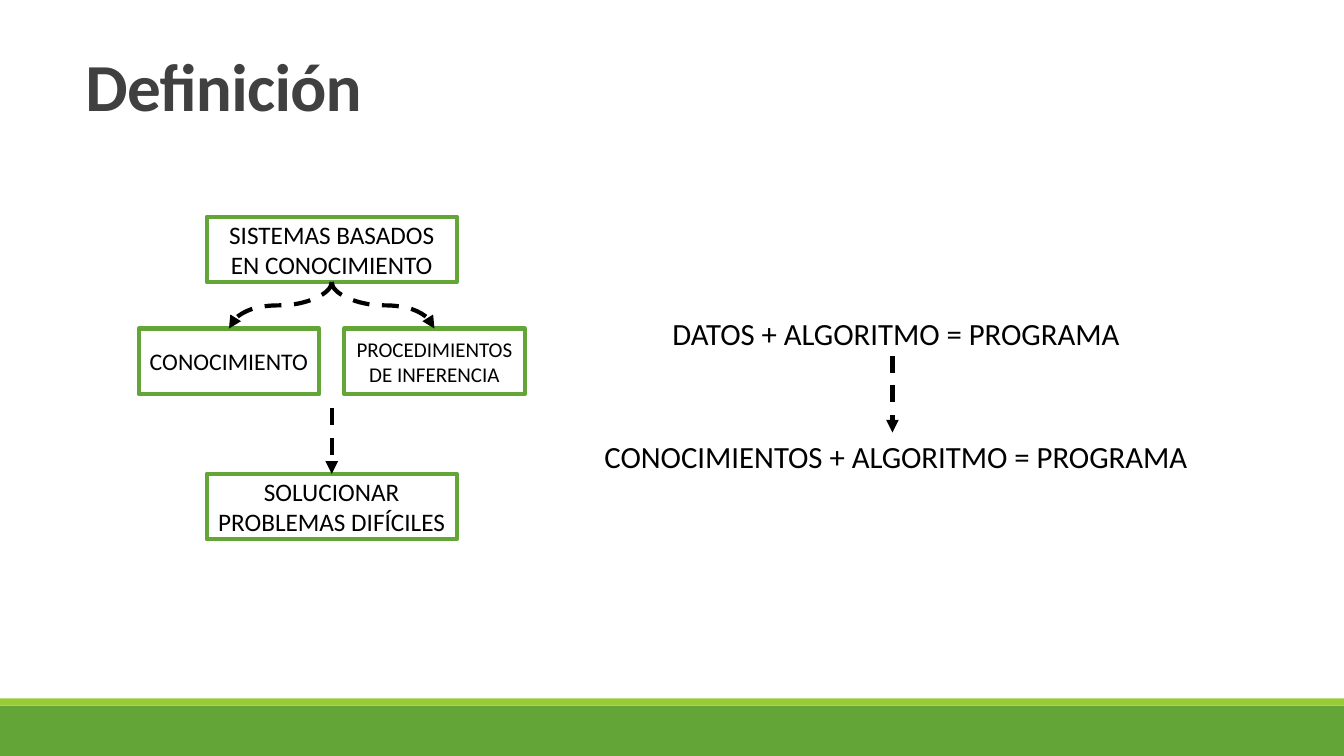
from lxml.etree import SubElement as Sub
from pptx import Presentation
from pptx.dml.color import RGBColor
from pptx.enum.dml import MSO_LINE as Dash
from pptx.enum.shapes import MSO_CONNECTOR as Conn, MSO_SHAPE as Shape
from pptx.enum.text import MSO_ANCHOR as Anchor, MSO_AUTO_SIZE as Auto, PP_ALIGN as Align
from pptx.oxml.ns import qn
from pptx.util import Cm, Pt

GREEN, LIME, BLACK, WHITE, GRAY = "63A537", "99CB38", "000000", "FFFFFF", "404040"


def color(code):
    return RGBColor.from_string(code)


class Page:
    font = "Calibri"
    stroke = Pt(3)

    def __init__(self, slide):
        self.slide = slide
        self.shapes = slide.shapes

    def style(self, frame, text, size, tint=BLACK, align=Align.CENTER):
        frame.word_wrap = True
        frame.auto_size = Auto.NONE
        frame.text = text
        para = frame.paragraphs[0]
        para.alignment = align
        para.font.name, para.font.size = self.font, Pt(size)
        para.font.color.rgb = color(tint)
        return para

    def title(self, text, x, y, w, h):
        head = self.shapes.title
        head.left, head.top, head.width, head.height = Cm(x), Cm(y), Cm(w), Cm(h)
        head.text_frame.vertical_anchor = Anchor.TOP
        para = self.style(head.text_frame, text, 48, GRAY, Align.JUSTIFY)
        para.font.bold = True
        para.line_spacing = 0.85
        para.runs[0].font._element.set("spc", "-50")

    def rect(self, x, y, w, h, fill):
        rect = self.shapes.add_shape(Shape.RECTANGLE, Cm(x), Cm(y), Cm(w), Cm(h))
        rect.shadow.inherit = False
        rect.fill.solid()
        rect.fill.fore_color.rgb = color(fill)
        rect.line.fill.background()
        return rect

    def box(self, text, mid, y, w, h, size):
        box = self.rect(mid - w / 2, y, w, h, WHITE)
        box.line.color.rgb = color(GREEN)
        box.line.width = self.stroke
        box.text_frame.vertical_anchor = Anchor.MIDDLE
        self.style(box.text_frame, text, size)

    def label(self, text, x, y, w, h):
        box = self.shapes.add_textbox(Cm(x), Cm(y), Cm(w), Cm(h))
        para = self.style(box.text_frame, text, 22)
        para.space_before = Pt(3)
        props = para._p.get_or_add_pPr()
        props.set("marL", str(Cm(0.18)))
        props.set("indent", "0")

    def arrow(self, x1, y1, x2, y2):
        """Downward dashed arrow, curved when it also moves sideways."""
        if x1 == x2:
            kind, ends = Conn.STRAIGHT, (x1, y1, x2, y2)
        else:
            # A curve leaves sideways, so lay it flat and turn it
            kind = Conn.CURVE
            side = 1 if x2 < x1 else -1
            mx, my = (x1 + x2) / 2, (y1 + y2) / 2
            dx, dy = abs(x2 - x1) / 2, side * (y2 - y1) / 2
            ends = (mx - dy, my - dx, mx + dy, my + dx)
        link = self.shapes.add_connector(kind, *map(Cm, ends))
        link.line.color.rgb = color(BLACK)
        link.line.width = self.stroke
        link.line.dash_style = Dash.DASH
        props = link._element.spPr
        if kind == Conn.CURVE:
            turn = 90 if side > 0 else 270
            props.find(qn("a:xfrm")).set("rot", str(turn * 60000))
        Sub(props.find(qn("a:ln")), qn("a:tailEnd"), type="triangle")
        Sub(props, qn("a:effectLst"))


def main():
    deck = Presentation()
    deck.slide_width, deck.slide_height = Cm(33.87), Cm(19.05)
    page = Page(deck.slides.add_slide(deck.slide_layouts[5]))

    # Footer bands and title
    page.rect(0, 17.78, 33.87, 1.27, GREEN)
    page.rect(0, 17.6, 33.87, 0.18, LIME)
    page.title("Definición", 1.9, 1.3, 30.02, 3.63)

    # Diagram of knowledge-based systems
    mid, gap, high = 8.36, 2.59, 1.65
    top, row, base = 5.46, 8.28, 11.94
    page.box("SOLUCIONAR PROBLEMAS DIFÍCILES", mid, base, 6.3, high, 18)
    page.box("SISTEMAS BASADOS EN CONOCIMIENTO", mid, top, 6.3, high, 18)
    page.arrow(mid, 10.29, mid, base)
    parts = (("CONOCIMIENTO", 17, mid - gap),
             ("PROCEDIMIENTOS DE INFERENCIA", 15, mid + gap))
    for text, size, x in parts:
        page.box(text, x, row, 4.55, high, size)
        page.arrow(mid, top + high, x, row)

    # Equations
    left, wide, tall = 14.63, 15.72, 1.17
    first, last = 7.8, 10.9
    page.label("DATOS + ALGORITMO = PROGRAMA", left, first, wide, tall)
    page.label("CONOCIMIENTOS + ALGORITMO = PROGRAMA", left, last, wide, tall)
    page.arrow(left + wide / 2, first + tall, left + wide / 2, last)

    deck.save("out.pptx")


if __name__ == "__main__":
    main()
